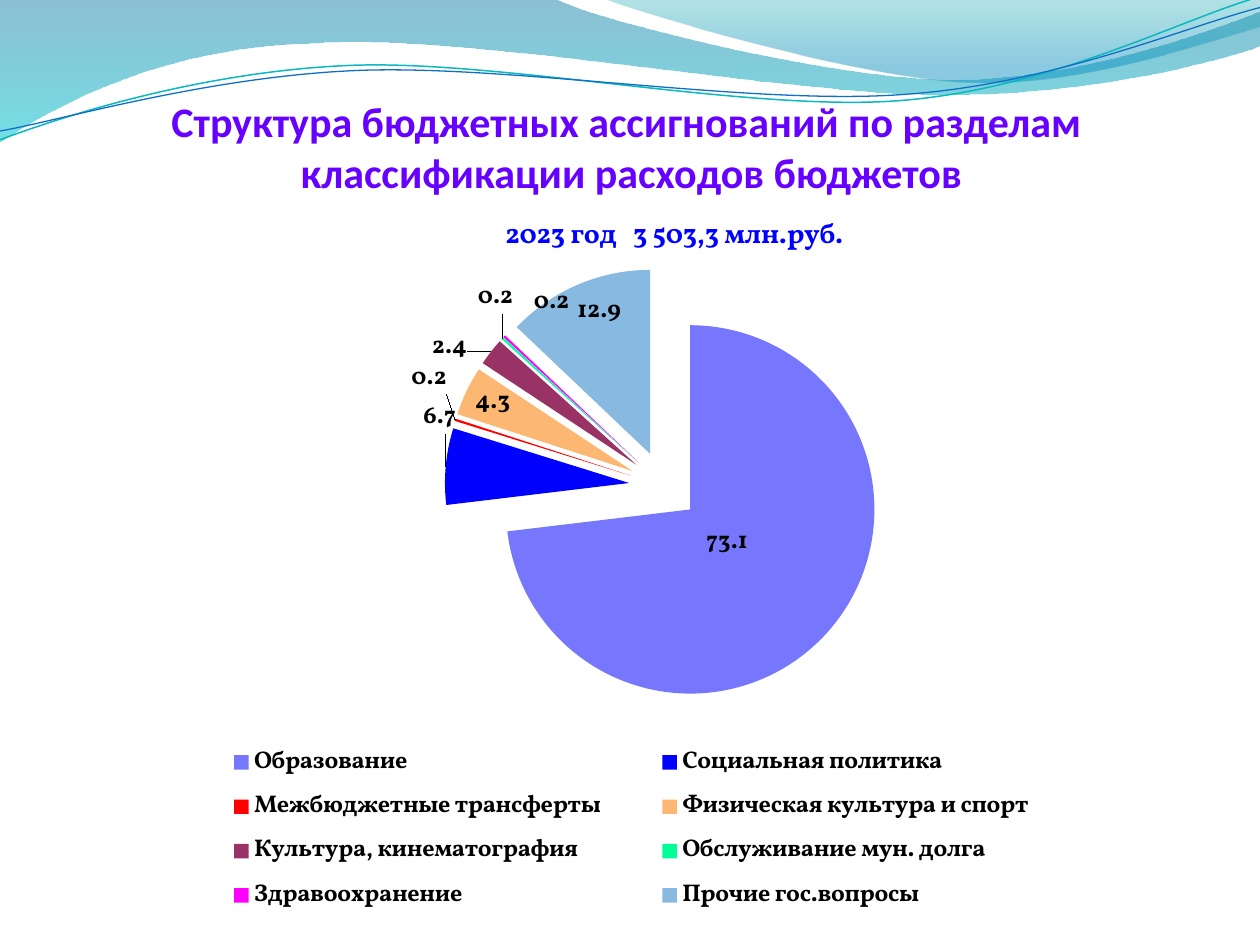
from lxml import etree
from pptx import Presentation
from pptx.chart.data import CategoryChartData
from pptx.dml.color import RGBColor
from pptx.enum.chart import XL_CHART_TYPE, XL_LABEL_POSITION, XL_LEGEND_POSITION
from pptx.enum.text import MSO_ANCHOR, PP_ALIGN
from pptx.oxml import parse_xml
from pptx.oxml.ns import nsdecls, qn
from pptx.util import Inches, Pt

BLACK = RGBColor(0, 0, 0)
BLUE = RGBColor(0, 0, 0xFF)
VIOLET = RGBColor(0x66, 0, 0xFF)
TEAL_LINE = RGBColor(0x0A, 0xB8, 0xBF)
BLUE_LINE = RGBColor(0x0F, 0x6F, 0xC6)

CHART_BOX = (0.57, 1.62, 9.24, 5.88)
EXPLOSION = 19

# category, share in %, slice colour, label shift from its default place in inches
SECTIONS = [
    ("Образование", 73.1, RGBColor(0x77, 0x77, 0xFD), (-1.01, -0.89)),
    ("Социальная политика", 6.7, BLUE, (0.14, -0.25)),
    ("Межбюджетные трансферты", 0.2, RGBColor(0xFF, 0, 0), (-0.01, -0.18)),
    ("Физическая культура и спорт", 4.3, RGBColor(0xFC, 0xB7, 0x72), (0.4, 0.25)),
    ("Культура, кинематография", 2.4, RGBColor(0x99, 0x33, 0x66), (-0.14, 0.13)),
    ("Обслуживание мун. долга", 0.2, RGBColor(0, 0xFF, 0x99), (0.13, -0.15)),
    ("Здравоохранение", 0.2, RGBColor(0xFF, 0, 0xFF), (0.56, -0.1)),
    ("Прочие гос.вопросы", 12.9, RGBColor(0x87, 0xB9, 0xE1), (0.37, 0.4)),
]


def trace(s, start, steps, close=False):
    """Draw an outline; a step is a line end (x, y) or a Bezier (x1, y1, x2, y2, x, y)."""
    ends = [(Inches(step[-2]), Inches(step[-1])) for step in steps]
    builder = s.shapes.build_freeform(Inches(start[0]), Inches(start[1]))
    builder.add_line_segments(ends, close=close)
    sp = builder.convert_to_shape()
    sp.shadow.inherit = False
    for segment, step in zip(sp._element.xpath(".//a:lnTo"), steps):
        if len(step) == 6:
            segment.tag = qn("a:cubicBezTo")
            for i in (0, 2):
                pt = etree.Element(qn("a:pt"))
                pt.set("x", str(Inches(step[i]) - sp.left))
                pt.set("y", str(Inches(step[i + 1]) - sp.top))
                segment.insert(i // 2, pt)
    return sp


def add_wave(s, start, steps, stops):
    """Closed outline with a downward gradient of (position, colour, opacity) stops."""
    sp = trace(s, start, steps, close=True)
    sp.line.fill.background()
    gs = "".join(
        f'<a:gs pos="{pos * 1000}"><a:srgbClr val="{color}">'
        f'<a:alpha val="{alpha * 1000}"/></a:srgbClr></a:gs>'
        for pos, color, alpha in stops)
    sp._element.spPr.find(qn("a:custGeom")).addnext(parse_xml(
        f'<a:gradFill {nsdecls("a")}><a:gsLst>{gs}</a:gsLst>'
        '<a:lin ang="5400000" scaled="0"/></a:gradFill>'))


def add_curve(s, start, steps, color, width):
    sp = trace(s, start, steps)
    sp.fill.background()
    sp.line.color.rgb = color
    sp.line.width = Pt(width)


def add_title(s, text):
    tf = s.shapes.add_textbox(Inches(0.51), Inches(0.28), Inches(9), Inches(1.28)).text_frame
    tf.word_wrap = True
    tf.vertical_anchor = MSO_ANCHOR.BOTTOM
    tf.margin_left = tf.margin_right = tf.margin_bottom = 0
    p = tf.paragraphs[0]
    p.text = text
    p.alignment = PP_ALIGN.CENTER
    set_font(p.font, 24, VIOLET, "Calibri")


def set_font(font, size, color, name="Vollkorn"):
    font.size, font.bold, font.name = Pt(size), True, name
    font.color.rgb = color


def place(parent, box, after=None, edge=True, inner=False):
    """Lay out a chart part by (x, y) or (x, y, w, h) in inches within the chart."""
    for old in parent.findall(qn("c:layout")):
        parent.remove(old)
    layout = etree.Element(qn("c:layout"))
    manual = etree.SubElement(layout, qn("c:manualLayout"))
    values = [("layoutTarget", "inner")] if inner else []
    if edge:
        values += [("xMode", "edge"), ("yMode", "edge")]
    values += [(tag, round(length / CHART_BOX[2 + i % 2], 4))
               for i, (tag, length) in enumerate(zip("xywh", box))]
    for tag, value in values:
        etree.SubElement(manual, qn(f"c:{tag}")).set("val", str(value))
    if after is None:
        parent.insert(0, layout)
    else:
        parent.find(qn(after)).addnext(layout)


def add_pie(s):
    data = CategoryChartData()
    data.categories = [name for name, _, _, _ in SECTIONS]
    data.add_series("Series 1", [value for _, value, _, _ in SECTIONS])
    chart = s.shapes.add_chart(XL_CHART_TYPE.PIE, *map(Inches, CHART_BOX), data).chart
    set_font(chart.font, 14, BLACK)

    chart.has_title = True
    p = chart.chart_title.text_frame.paragraphs[0]
    p.text = "2023 год   3 503,3 млн.руб."
    set_font(p.font, 16, BLUE)
    place(chart.chart_title._element, (3.4, 0.04), "c:tx")

    chart.has_legend = True
    chart.legend.position = XL_LEGEND_POSITION.RIGHT
    chart.legend.include_in_layout = False
    set_font(chart.legend.font, 13.8, BLACK)
    place(chart.legend._element, (0.86, 4.21, 7.16, 1.5), "c:legendPos")

    plot = chart.plots[0]
    plot.vary_by_categories = True
    place(chart._chartSpace.chart.plotArea, (0.87, 0.5, 7.66, 3.48), inner=True)

    series = plot.series[0]
    series.data_labels.show_value = True
    set_font(series.data_labels.font, 14, BLACK)
    for i, (_, _, color, shift) in enumerate(SECTIONS):
        point = series.points[i]
        point.format.fill.solid()
        point.format.fill.fore_color.rgb = color
        set_font(point.data_label.font, 14, BLACK)
        point.data_label.position = XL_LABEL_POSITION.BEST_FIT
        label = series._element.xpath(f"c:dLbls/c:dLbl[c:idx/@val={i}]")[0]
        place(label, shift, "c:idx", edge=False)
    explosion = etree.Element(qn("c:explosion"))
    explosion.set("val", str(EXPLOSION))
    series._element.find(qn("c:dPt")).addprevious(explosion)


def main():
    prs = Presentation()
    prs.slide_width, prs.slide_height = Inches(10), Inches(7.5)
    s = prs.slides.add_slide(prs.slide_layouts[6])
    add_wave(s, (0, 0), [
        (4.4, -0.01), (4.76, 0.17, 6.64, 0.63, 7.58, 0.63), (8.53, 0.63, 9.58, 0.26, 10, 0.09),
        (10.01, 0.36), (9.83, 0.44, 8.7, 0.76, 7.46, 0.75), (6.22, 0.75, 3.82, 0.28, 2.57, 0.34),
        (1.29, 0.36, 0.46, 0.83, -0.01, 1.13)], [(0, "0074A1", 45), (100, "00C6CF", 55)])
    add_wave(s, (4.79, -0.01), [
        (5.09, 0.11, 6.82, 0.62, 7.69, 0.65), (8.56, 0.69, 9.61, 0.32, 10, 0.21),
        (10, 0)], [(0, "00A1A9", 30), (80, "008BBF", 45)])
    add_curve(s, (0, 1.11), [
        (0.48, 0.93, 1.58, 0.57, 2.77, 0.52), (3.95, 0.47, 5.93, 0.89, 7.13, 0.8),
        (8.33, 0.71, 9.38, 0.15, 9.98, -0.02)], TEAL_LINE, 0.85)
    add_curve(s, (0, 1.04), [
        (0.47, 0.96, 1.64, 0.61, 2.83, 0.56), (4.03, 0.51, 5.97, 0.84, 7.17, 0.75),
        (8.36, 0.67, 9.41, 0.21, 10, 0.06)], BLUE_LINE, 0.75)
    add_title(s, "Структура бюджетных ассигнований по разделам \vклассификации расходов бюджетов")
    add_pie(s)
    prs.save("out.pptx")


if __name__ == "__main__":
    main()
